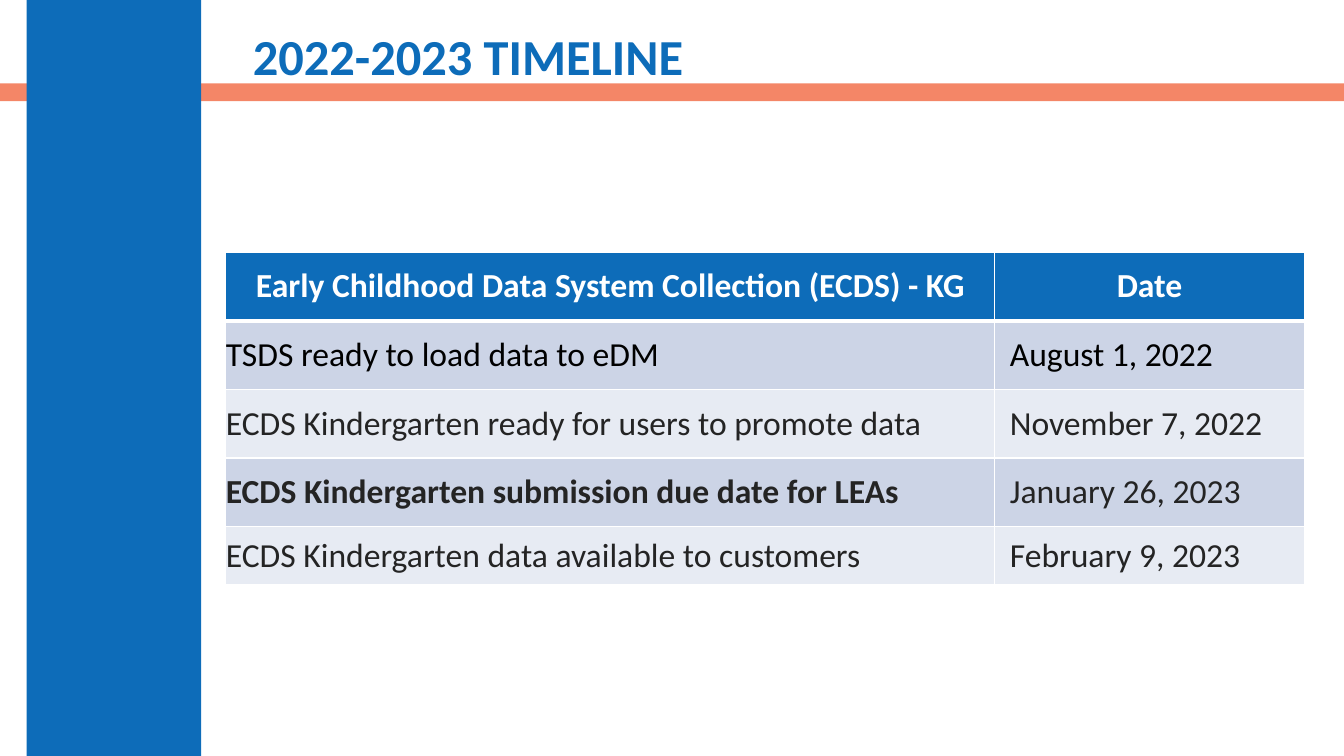
import pptx
import pptx.dml.color
import pptx.enum.shapes
import pptx.enum.text
import pptx.oxml
import pptx.oxml.ns
import pptx.util

Cm = pptx.util.Cm
Pt = pptx.util.Pt
ALIGN = pptx.enum.text.PP_ALIGN
MIDDLE = pptx.enum.text.MSO_ANCHOR.MIDDLE

TITLE = "2022-2023 TIMELINE"
HEAD = ("Early Childhood Data System Collection (ECDS) - KG", "Date")
# event, date, text colour, bold event
EVENTS = [
    ("TSDS ready to load data to eDM", "August 1, 2022", "000000", False),
    ("ECDS Kindergarten ready for users to promote data", "November 7, 2022", "242424", False),
    ("ECDS Kindergarten submission due date for LEAs", "January 26, 2023", "242424", True),
    ("ECDS Kindergarten data available to customers", "February 9, 2023", "242424", False),
]

FONT = "Calibri"
BLUE, CORAL, WHITE = "0D6CB9", "F16038", "FFFFFF"
BANDS = ("CCD4E6", "E7EBF3")
WIDE, HIGH = Cm(33.87), Cm(19.05)
COLS = (Cm(19.38), Cm(7.8))
ROWS = [Cm(1.73)] * 4 + [Cm(1.47)]
INDENT = Cm(0.38)


def rgb(code):
    return pptx.dml.color.RGBColor.from_string(code)


def style(para, size, color, bold):
    font = para.font
    font.name, font.size, font.bold = FONT, Pt(size), bold
    font.color.rgb = rgb(color)


def bar(slide, left, top, width, height, color):
    shape = slide.shapes.add_shape(
        pptx.enum.shapes.MSO_SHAPE.RECTANGLE, left, top, width, height)
    shape.shadow.inherit = False
    shape.fill.solid()
    shape.fill.fore_color.rgb = rgb(color)
    shape.line.fill.background()
    return shape


def fade(shape, percent):
    """Make a solid fill partly transparent, percent being its opacity."""
    tint = shape.fill._xPr.find(".//" + pptx.oxml.ns.qn("a:srgbClr"))
    tint.append(pptx.oxml.parse_xml(
        f'<a:alpha {pptx.oxml.ns.nsdecls("a")} val="{percent * 1000}"/>'))


def edge(cell, top, bottom):
    """Draw white cell borders; top and bottom are widths in points."""
    props = cell._tc.get_or_add_tcPr()
    for side, width in (("L", 1), ("R", 1), ("T", top), ("B", bottom)):
        props.append(pptx.oxml.parse_xml(
            f'<a:ln{side} {pptx.oxml.ns.nsdecls("a")} w="{Pt(width)}"><a:solidFill>'
            f'<a:srgbClr val="{WHITE}"/></a:solidFill></a:ln{side}>'))


def put(cell, text, fill, color, bold, align, indent):
    cell.margin_left = indent
    cell.margin_right = cell.margin_top = cell.margin_bottom = 0
    cell.vertical_anchor = MIDDLE
    cell.fill.solid()
    cell.fill.fore_color.rgb = rgb(fill)
    cell.text = text
    para = cell.text_frame.paragraphs[0]
    para.alignment = align
    style(para, 24, color, bold)


def add_title(slide):
    title = slide.shapes.title
    title.left, title.top = Cm(6.12), Cm(0.46)
    title.width, title.height = Cm(26.75), Cm(2.08)
    frame = title.text_frame
    frame.text = TITLE
    frame.word_wrap = True
    frame.vertical_anchor = MIDDLE
    para = frame.paragraphs[0]
    para.alignment = ALIGN.LEFT
    para.line_spacing = 0.9
    style(para, 36, BLUE, True)
    slide.shapes._spTree.append(title._element)


def add_dates(slide):
    table = slide.shapes.add_table(
        len(ROWS), len(COLS), Cm(5.69), Cm(6.35), sum(COLS), sum(ROWS)).table
    for col, width in zip(table.columns, COLS):
        col.width = width
    for row, height in zip(table.rows, ROWS):
        row.height = height
    for r in range(len(ROWS)):
        for c in range(len(COLS)):
            cell = table.cell(r, c)
            edge(cell, 3 if r == 1 else 1, 3 if r == 0 else 1)
            if r == 0:
                put(cell, HEAD[c], BLUE, WHITE, True, ALIGN.CENTER, 0)
            else:
                event = EVENTS[r - 1]
                put(cell, event[c], BANDS[(r - 1) % 2], event[2],
                    event[3] and c == 0, ALIGN.LEFT, INDENT * c)


def main():
    deck = pptx.Presentation()
    deck.slide_width, deck.slide_height = WIDE, HIGH
    slide = deck.slides.add_slide(deck.slide_layouts.get_by_name("Title Only"))
    fade(bar(slide, 0, Cm(2.1), WIDE, Cm(0.45), CORAL), 76)
    bar(slide, Cm(0.67), 0, Cm(4.4), HIGH, BLUE)
    add_title(slide)
    add_dates(slide)
    deck.save("out.pptx")


if __name__ == "__main__":
    main()
